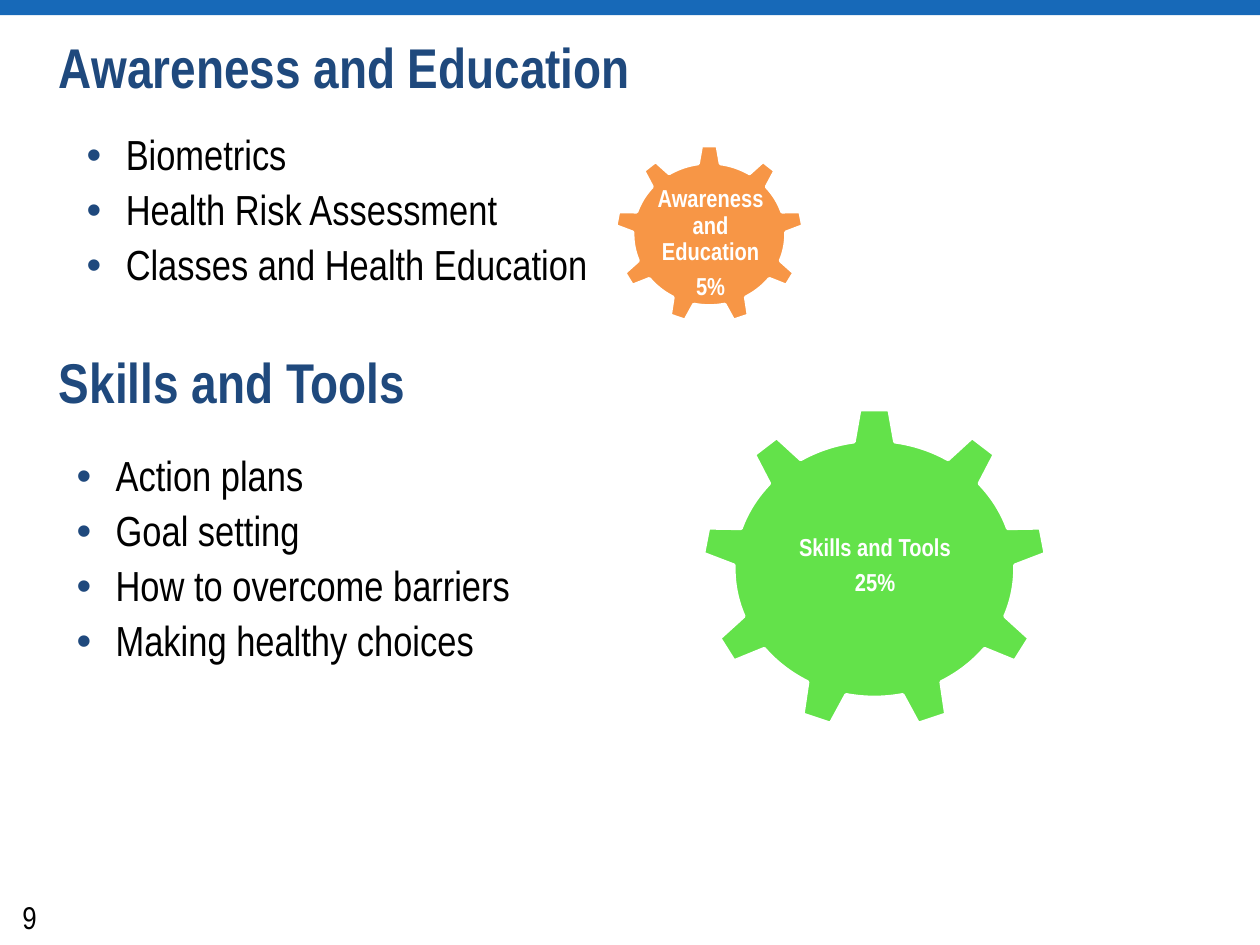
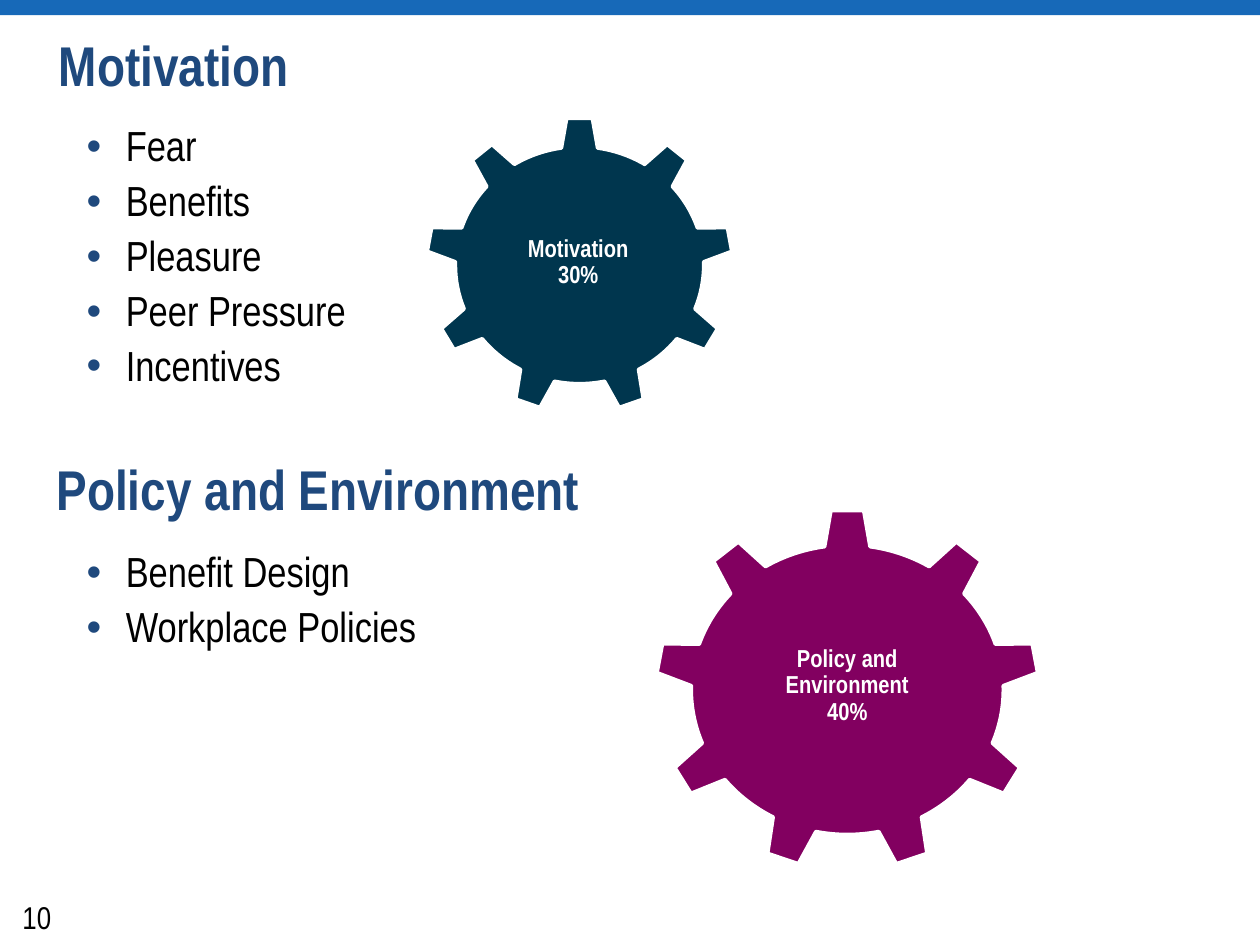
from lxml.etree import SubElement
from pptx import Presentation
from pptx.dml.color import RGBColor
from pptx.enum.shapes import MSO_SHAPE as Shape
from pptx.enum.text import MSO_ANCHOR as Anchor, PP_ALIGN as Align
from pptx.oxml.ns import qn
from pptx.util import Pt

PX = 9144  # EMU per px, 100 px to the inch
FONT = "Arial Narrow"
BAND, NAVY, BLACK, WHITE = "1769B8", "1F497D", "000000", "FFFFFF"
INDENT = 31

# Each topic: heading, its box, bullets, their box,
# gear colour, gear box, gear label (paragraphs of lines), label box
SLIDES = [
    (9, [
        ("Awareness and Education", (37, 27, 963, 59),
         ["Biometrics", "Health Risk Assessment", "Classes and Health Education"],
         (59, 100, 877, 180),
         "F79646", (488, 115, 150, 142),
         [["Awareness and Education"], ["5%"]], (519, 157, 90, 73)),
        ("Skills and Tools", (37, 277, 963, 59),
         ["Action plans", "Goal setting", "How to overcome barriers",
          "Making healthy choices"],
         (51, 355, 877, 224),
         "63E24A", (557, 324, 274, 255),
         [["Skills and Tools"], ["25%"]], (612, 384, 165, 131)),
    ]),
    (10, [
        ("Motivation", (37, 25, 963, 59),
         ["Fear", "Benefits", "Pleasure", "Peer Pressure", "Incentives"],
         (59, 93, 877, 224),
         "00364E", (338, 93, 244, 235),
         [["Motivation", "30%"]], (386, 148, 146, 121)),
        ("Policy and Environment", (35, 362, 715, 59),
         ["Benefit Design", "Workplace Policies"],
         (59, 431, 877, 136),
         "820060", (520, 404, 305, 287),
         [["Policy and Environment", "40%"]], (581, 471, 183, 147)),
    ]),
]


def add_text(slide, box, paragraphs, size, color, bold=False, spacing=1.0):
    """Add a text box; each paragraph is a list of lines. Return its frame."""
    frame = slide.shapes.add_textbox(*(n * PX for n in box)).text_frame
    frame.word_wrap = True
    for index, lines in enumerate(paragraphs):
        paragraph = frame.add_paragraph() if index else frame.paragraphs[0]
        paragraph.line_spacing = spacing
        for number, line in enumerate(lines):
            if number:
                paragraph.add_line_break()
            run = paragraph.add_run()
            run.text = line
            run.font.name, run.font.size, run.font.bold = FONT, Pt(size), bold
            run.font.color.rgb = RGBColor.from_string(color)
    return frame


def add_filled(slide, preset, box, color):
    shape = slide.shapes.add_shape(preset, *(n * PX for n in box))
    shape.shadow.inherit = False
    shape.fill.solid()
    shape.fill.fore_color.rgb = RGBColor.from_string(color)
    shape.line.fill.background()
    return shape


deck = Presentation()
deck.slide_width, deck.slide_height = 1000 * PX, 750 * PX

for page, topics in SLIDES:
    slide = deck.slides.add_slide(deck.slide_layouts[6])
    add_filled(slide, Shape.RECTANGLE, (0, 0, 1000, 12), BAND)

    for (heading, heading_box, bullets, bullets_box,
         gear_color, gear_box, label, label_box) in topics:
        add_text(slide, heading_box, [[heading]], 32, NAVY, bold=True, spacing=0.9)

        body = add_text(slide, bullets_box, [[b] for b in bullets], 24, BLACK,
                        spacing=0.95)
        for item in body.paragraphs:
            item.space_before = Pt(4)
            props = item._p.get_or_add_pPr()
            props.set("marL", str(INDENT * PX))
            props.set("indent", str(-INDENT * PX))
            SubElement(SubElement(props, qn("a:buClr")), qn("a:srgbClr"), val=NAVY)
            SubElement(props, qn("a:buFont"), typeface="Arial")
            SubElement(props, qn("a:buChar"), char="•")

        gear = add_filled(slide, Shape.GEAR_9, gear_box, gear_color)
        gear.line.color.rgb = RGBColor.from_string(WHITE)
        gear.line.width = Pt(2)

        caption = add_text(slide, label_box, label, 14, WHITE, bold=True, spacing=0.9)
        caption.vertical_anchor = Anchor.MIDDLE
        caption.margin_left = caption.margin_right = 2 * PX
        caption.margin_top = caption.margin_bottom = 2 * PX
        for paragraph in caption.paragraphs:
            paragraph.alignment = Align.CENTER
            paragraph.space_after = Pt(5)

    add_text(slide, (8, 708, 51, 25), [[str(page)]], 18, BLACK)

deck.save("out.pptx")
